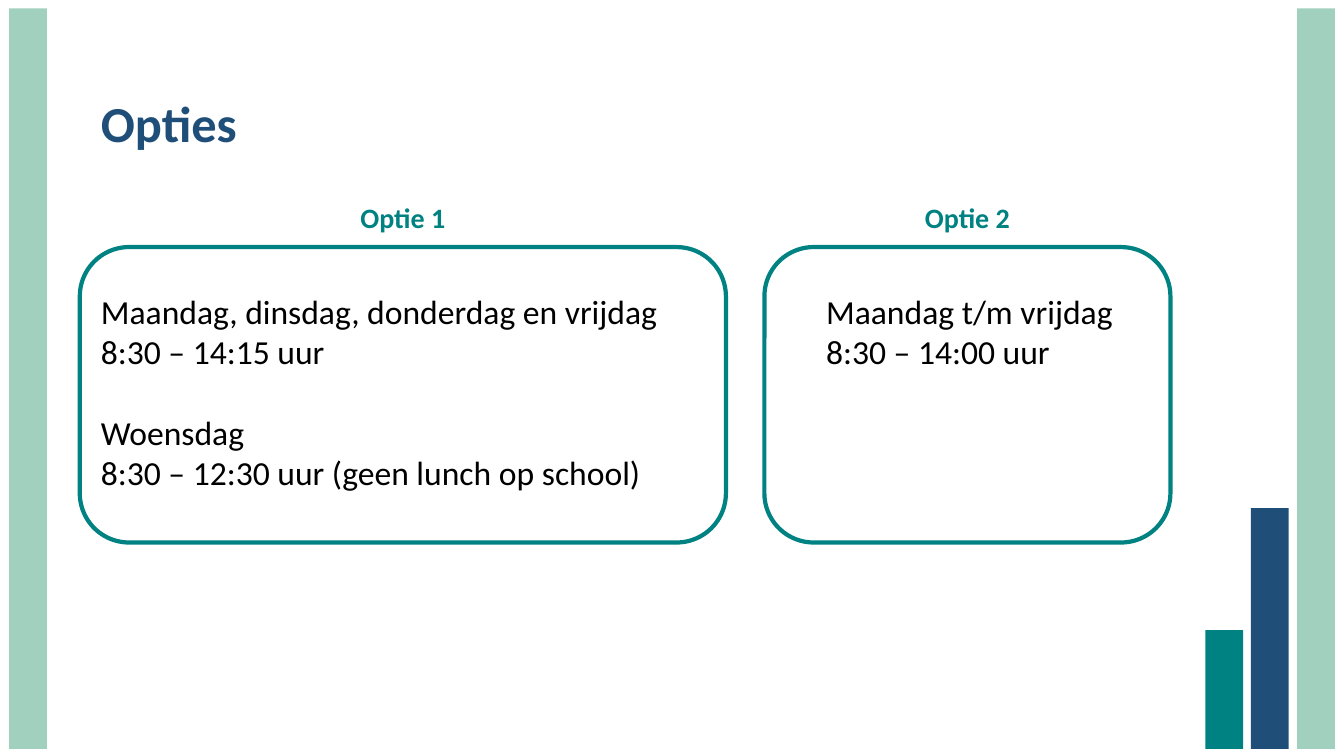
from pptx import Presentation
from pptx.dml.color import RGBColor
from pptx.enum.shapes import MSO_SHAPE
from pptx.enum.text import PP_ALIGN
from pptx.util import Pt

HUES = {"mint": "A2D0BF", "navy": "1F4F79", "teal": "008182", "black": "000000"}


class Deck:
    """Holds the style and the current slide, and draws each kind of element."""

    def __init__(self):
        self.show = Presentation()
        self.show.slide_width, self.show.slide_height = Pt(960), Pt(540)
        self.slide = self.show.slides.add_slide(self.show.slide_layouts[6])
        self.font = "Calibri"
        self.base = 535

    def hue(self, name):
        return RGBColor.from_string(HUES[name])

    def shape(self, kind, left, top, width, height):
        item = self.slide.shapes.add_shape(
            kind, Pt(left), Pt(top), Pt(width), Pt(height))
        item.shadow.inherit = False
        return item

    def bar(self, left, top, hue):
        item = self.shape(MSO_SHAPE.RECTANGLE, left, top, 27, self.base - top)
        item.fill.solid()
        item.fill.fore_color.rgb = self.hue(hue)
        item.line.fill.background()

    def frame(self, left, width):
        item = self.shape(MSO_SHAPE.ROUNDED_RECTANGLE, left, 176.5, width, 211)
        item.fill.background()
        item.line.color.rgb = self.hue("teal")
        item.line.width = Pt(3)

    def text(self, place, groups, size=24, hue="black", bold=False,
             align=PP_ALIGN.LEFT, space=1.0):
        box = self.slide.shapes.add_textbox(*map(Pt, place)).text_frame
        box.word_wrap = True
        for index, lines in enumerate(groups):
            para = box.add_paragraph() if index else box.paragraphs[0]
            para.alignment, para.line_spacing = align, space
            para.space_before = Pt(29 if index else 0)
            for row, line in enumerate(lines):
                if row:
                    para.add_line_break()
                run = para.add_run()
                run.text = line
                run.font.name, run.font.size = self.font, Pt(size)
                run.font.bold = bold
                run.font.color.rgb = self.hue(hue)

    def label(self, left, width, words):
        self.text((left, 139.5, width, 47.5), [[words]], 20, "teal", True,
                  PP_ALIGN.CENTER)


def main():
    deck = Deck()
    for left, top, hue in ((6.5, 6, "mint"), (926.5, 6, "mint"),
                           (893.5, 363, "navy"), (861, 450, "teal")):
        deck.bar(left, top, hue)

    deck.text((65, 67.5, 580, 85), [["Opties"]], 36, "navy", True, space=0.9)
    deck.text((65, 204, 448, 180), [
        ["Maandag, dinsdag, donderdag en vrijdag", "8:30 – 14:15 uur"],
        ["Woensdag", "8:30 – 12:30 uur (geen lunch op school)"],
    ])
    deck.text((583, 204, 278, 150),
              [["Maandag t/m vrijdag", "8:30 – 14:00 uur"]])

    for left, width, words in ((57, 461.5, "Optie 1"), (546, 290, "Optie 2")):
        deck.frame(left, width)
        deck.label(left, width, words)
    deck.show.save("out.pptx")


if __name__ == "__main__":
    main()
